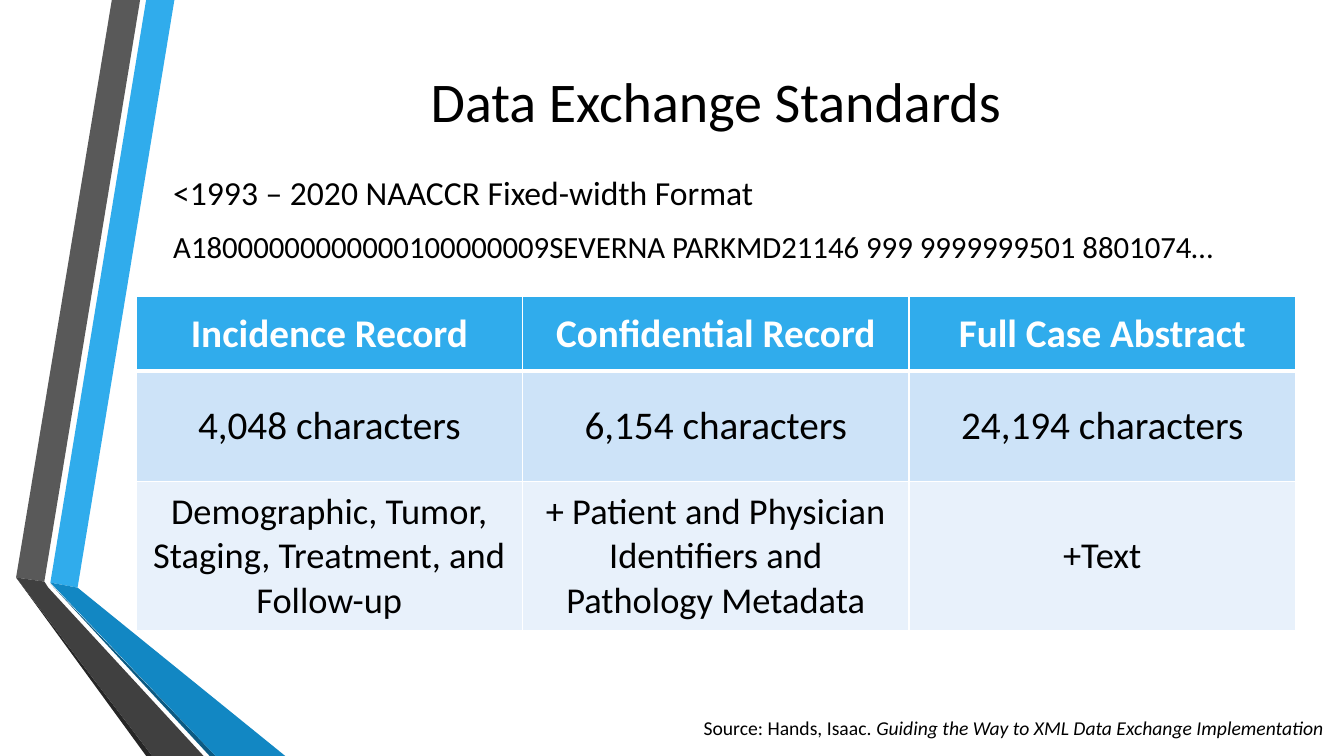
from dataclasses import dataclass

from lxml import etree
from pptx import Presentation
from pptx.dml.color import RGBColor
from pptx.enum.text import MSO_ANCHOR, PP_ALIGN
from pptx.oxml.ns import qn
from pptx.util import Inches, Pt

CENTER, LEFT = PP_ALIGN.CENTER, PP_ALIGN.LEFT
MIDDLE, TOP = MSO_ANCHOR.MIDDLE, MSO_ANCHOR.TOP


@dataclass(frozen=True)
class Theme:
    font: str = "Calibri"
    text: str = "000000"
    white: str = "FFFFFF"
    blue: str = "30ACEC"
    blue_mid: str = "1287C3"
    blue_dark: str = "0C5A82"
    grey: str = "595959"
    grey_mid: str = "404040"
    grey_dark: str = "262626"
    row_tint: str = "CDE3F8"
    row_pale: str = "E8F1FB"
    title_size: int = 40
    heading_size: int = 24
    sample_size: int = 22
    table_size: int = 28
    detail_size: int = 26
    source_size: int = 14


THEME = Theme()

# Ribbon bands, back to front: colour and corner points in inches
RIBBON = [
    (THEME.blue, [(0.5, 5.78), (0.77, 5.83), (1.73, 0), (1.45, 0)]),
    (THEME.grey, [(1.39, 0), (1.11, 0), (0.16, 5.73), (0.44, 5.77)]),
    (THEME.grey_dark, [(0.16, 5.73), (1.45, 7.5), (1.51, 7.5)]),
    (THEME.blue_dark, [(0.5, 5.79), (2.08, 7.5), (2.14, 7.5)]),
    (THEME.blue_mid, [(0.5, 5.78), (2.14, 7.5), (2.83, 7.5), (0.77, 5.83)]),
    (THEME.grey_mid, [(2.02, 7.5), (0.48, 5.83), (0.44, 5.77), (0.16, 5.73), (1.51, 7.5)]),
]

# Table rows: height, fill, text size, text colour, bold, cells
RECORD_ROWS = [
    (0.74, THEME.blue, THEME.table_size, THEME.white, True,
     ["Incidence Record", "Confidential Record", "Full Case Abstract"]),
    (1.1, THEME.row_tint, THEME.table_size, THEME.text, False,
     ["4,048 characters", "6,154 characters", "24,194 characters"]),
    (1.48, THEME.row_pale, THEME.detail_size, THEME.text, False,
     ["Demographic, Tumor, Staging, Treatment, and Follow-up",
      "+ Patient and Physician Identifiers and Pathology Metadata",
      "+Text"]),
]


def style_run(run, size, color=THEME.text, bold=False, italic=False):
    font = run.font
    font.name, font.size = THEME.font, Pt(size)
    font.bold, font.italic = bold, italic
    font.color.rgb = RGBColor.from_string(color)


def add_band(slide, color, points):
    corners = [(Inches(x), Inches(y)) for x, y in points]
    outline = slide.shapes.build_freeform(*corners[0], scale=1.0)
    outline.add_line_segments(corners[1:], close=True)
    band = outline.convert_to_shape()
    band.shadow.inherit = False
    band.fill.solid()
    band.fill.fore_color.rgb = RGBColor.from_string(color)
    band.line.fill.background()


def add_text(slide, box, paragraphs, anchor=MIDDLE, align=LEFT, before=0, after=0):
    """Each paragraph is a list of (text, size, italic) runs."""
    frame = slide.shapes.add_textbox(*map(Inches, box)).text_frame
    frame.word_wrap = True
    frame.vertical_anchor = anchor
    for index, runs in enumerate(paragraphs):
        paragraph = frame.add_paragraph() if index else frame.paragraphs[0]
        paragraph.alignment = align
        paragraph.space_before, paragraph.space_after = Pt(before), Pt(after)
        for text, size, italic in runs:
            run = paragraph.add_run()
            run.text = text
            style_run(run, size, italic=italic)


def set_borders(cell, top, bottom):
    """White borders, 1 pt at the sides; they must precede the cell's fill."""
    properties = cell._tc.get_or_add_tcPr()
    sides = [("a:lnL", 1), ("a:lnR", 1), ("a:lnT", top), ("a:lnB", bottom)]
    for position, (tag, width) in enumerate(sides):
        border = etree.Element(qn(tag), w=str(Pt(width)))
        fill = etree.SubElement(border, qn("a:solidFill"))
        etree.SubElement(fill, qn("a:srgbClr"), val=THEME.white)
        properties.insert(position, border)


def add_record_table(slide, left, top, width):
    columns = len(RECORD_ROWS[0][-1])
    height = sum(row[0] for row in RECORD_ROWS)
    table = slide.shapes.add_table(
        len(RECORD_ROWS), columns,
        Inches(left), Inches(top), Inches(width), Inches(height)).table
    for column in table.columns:
        column.width = Inches(width / columns)
    for r, (row_height, fill, size, color, bold, texts) in enumerate(RECORD_ROWS):
        table.rows[r].height = Inches(row_height)
        for c, text in enumerate(texts):
            cell = table.cell(r, c)
            cell.fill.solid()
            cell.fill.fore_color.rgb = RGBColor.from_string(fill)
            cell.vertical_anchor = MIDDLE
            # A thicker rule parts the header from the first row
            set_borders(cell, top=3 if r == 1 else 1, bottom=3 if r == 0 else 1)
            cell.text_frame.text = text
            paragraph = cell.text_frame.paragraphs[0]
            paragraph.alignment = CENTER
            style_run(paragraph.runs[0], size, color, bold)


def main():
    deck = Presentation()
    deck.slide_width, deck.slide_height = Inches(13.33), Inches(7.5)
    slide = deck.slides.add_slide(deck.slide_layouts[6])

    # Folded ribbon on the left
    for color, points in RIBBON:
        add_band(slide, color, points)

    # Title and sample record
    add_text(slide, (1.62, 0.03, 10.96, 1.92),
             [[("Data Exchange Standards", THEME.title_size, False)]], align=CENTER)
    add_text(slide, (1.62, 1.59, 10.96, 1.15), [
        [("<1993 – 2020 NAACCR Fixed-width Format", THEME.heading_size, False)],
        [("A18000000000000100000009SEVERNA PARKMD21146 999 9999999501 8801074…",
          THEME.sample_size, False)],
    ], before=4.5, after=6)

    # Record types
    add_record_table(slide, 1.35, 2.94, 11.5)

    # Source
    add_text(slide, (6.88, 7.05, 6.45, 0.34), [[
        ("Source: Hands, Isaac. ", THEME.source_size, False),
        ("Guiding the Way to XML Data Exchange Implementation", THEME.source_size, True),
    ]], anchor=TOP)

    deck.save("out.pptx")


if __name__ == "__main__":
    main()
